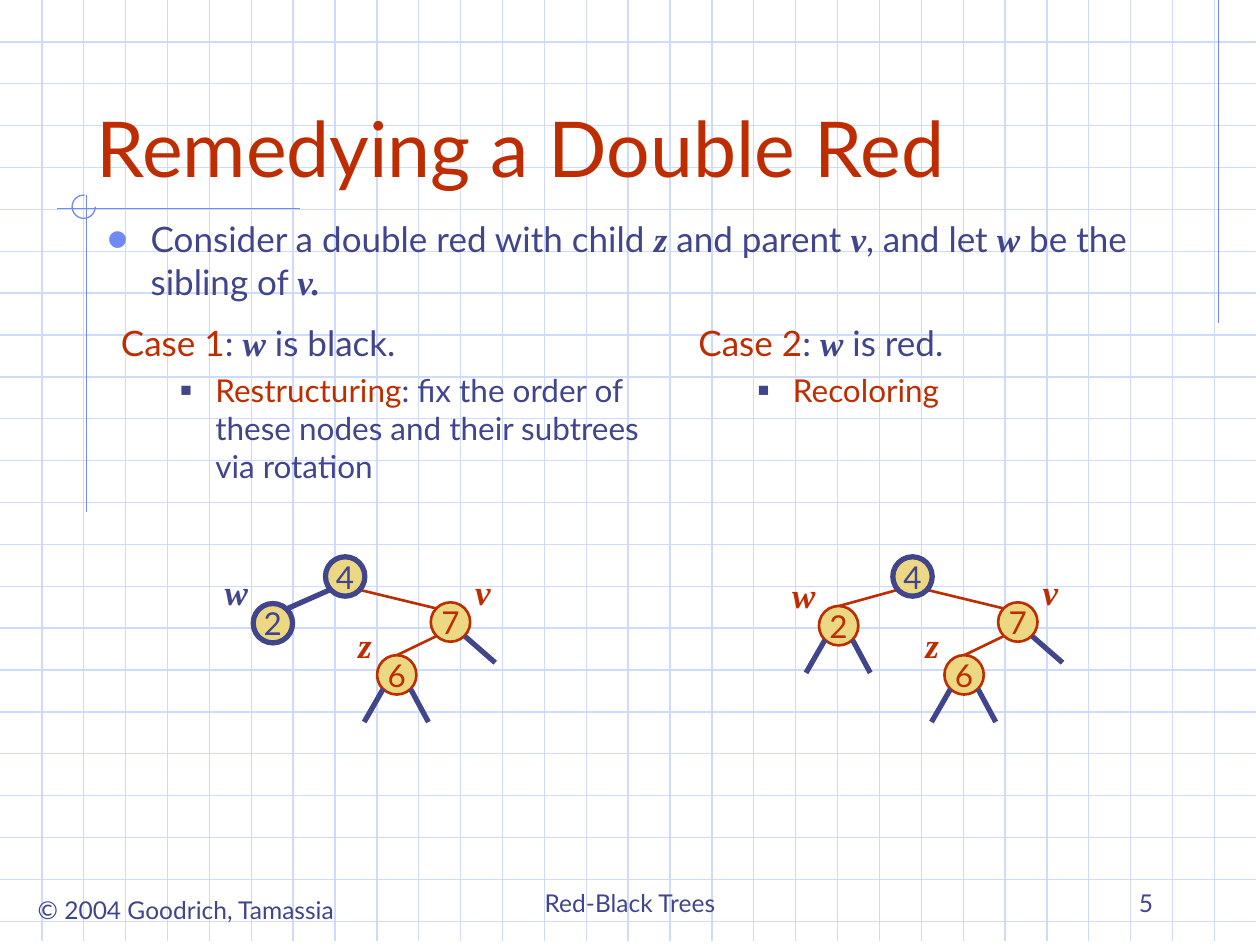
from dataclasses import dataclass
from typing import NamedTuple

import pptx
import pptx.dml.color
import pptx.enum.shapes
import pptx.enum.text
import pptx.oxml
import pptx.oxml.ns
import pptx.util

Pt = pptx.util.Pt
Shape = pptx.enum.shapes.MSO_SHAPE
Align = pptx.enum.text.PP_ALIGN
Anchor = pptx.enum.text.MSO_ANCHOR
qn = pptx.oxml.ns.qn


@dataclass(frozen=True)
class Theme:
    ink: str = "40458C"
    red: str = "BE2D00"
    gold: str = "ECD882"
    blue: str = "6F89F7"
    grid: str = "CFDBFD"
    sans: str = "Lato"
    serif: str = "Times New Roman"
    title: float = 44
    body: float = 20
    sub: float = 18
    foot: float = 14
    hair: float = 0.75
    thin: float = 1.5
    thick: float = 3


T = Theme()
SIZE = 22.5  # node diameter


class Run(NamedTuple):
    text: str
    color: str = T.ink
    math: bool = False


class Bullet(NamedTuple):
    char: str
    color: str
    scale: int


class Para(NamedTuple):
    runs: list[Run]
    size: float = T.body
    align: Align = Align.LEFT
    left: float = 0
    hang: float = 0
    before: float = 0
    level: int = 0
    mark: Bullet | None = None


class Line(NamedTuple):
    x1: float
    y1: float
    x2: float
    y2: float
    color: str = T.ink
    width: float = T.thick


class Node(NamedTuple):
    text: str
    x: float
    y: float
    color: str = T.red
    width: float = T.thin


class Label(NamedTuple):
    text: str
    x: float
    y: float
    width: float
    color: str = T.red


class Case(NamedTuple):
    dx: float
    nodes: list[Node]
    edges: list[Line]
    legs: list[Line]
    labels: list[Label]


def rgb(code: str) -> pptx.dml.color.RGBColor:
    return pptx.dml.color.RGBColor.from_string(code)


def add_line(slide, line: Line, dx: float = 0) -> None:
    item = slide.shapes.add_connector(
        pptx.enum.shapes.MSO_CONNECTOR.STRAIGHT,
        Pt(line.x1 + dx), Pt(line.y1), Pt(line.x2 + dx), Pt(line.y2))
    item.line.color.rgb = rgb(line.color)
    item.line.width = Pt(line.width)
    props = item._element.spPr
    props.append(props.makeelement(qn("a:effectLst"), {}))


def set_mark(props, mark: Bullet | None) -> None:
    if mark is None:
        props.append(props.makeelement(qn("a:buNone"), {}))
        return
    tint = props.makeelement(qn("a:buClr"), {})
    tint.append(tint.makeelement(qn("a:srgbClr"), {"val": mark.color}))
    props.append(tint)
    for tag, key, value in (("a:buSzPct", "val", str(mark.scale * 1000)),
                            ("a:buFont", "typeface", "Arial"),
                            ("a:buChar", "char", mark.char)):
        props.append(props.makeelement(qn(tag), {key: value}))


def fill_text(frame, paras: list[Para]) -> None:
    for i, para in enumerate(paras):
        item = frame.add_paragraph() if i else frame.paragraphs[0]
        item.level, item.alignment = para.level, para.align
        item.space_before = Pt(para.before)
        props = item._p.get_or_add_pPr()
        props.set("marL", str(Pt(para.left)))
        props.set("indent", str(Pt(para.hang)))
        set_mark(props, para.mark)
        for part in para.runs:
            run = item.add_run()
            run.text = part.text
            run.font.size = Pt(para.size)
            run.font.name = T.serif if part.math else T.sans
            run.font.bold = run.font.italic = part.math
            run.font.color.rgb = rgb(part.color)


def add_text(slide, x: float, y: float, w: float, h: float, paras: list[Para],
             anchor: Anchor = Anchor.TOP, wrap: bool = True) -> None:
    frame = slide.shapes.add_textbox(Pt(x), Pt(y), Pt(w), Pt(h)).text_frame
    frame.word_wrap, frame.vertical_anchor = wrap, anchor
    fill_text(frame, paras)


def add_node(slide, node: Node, dx: float) -> None:
    item = slide.shapes.add_shape(
        Shape.OVAL, Pt(node.x + dx), Pt(node.y), Pt(SIZE), Pt(SIZE))
    item.shadow.inherit = False
    item.fill.solid()
    item.fill.fore_color.rgb = rgb(T.gold)
    item.line.color.rgb = rgb(node.color)
    item.line.width = Pt(node.width)
    item.text_frame.word_wrap = False
    item.text_frame.vertical_anchor = Anchor.MIDDLE
    fill_text(item.text_frame,
              [Para([Run(node.text, node.color)], T.sub, Align.CENTER)])


def legs(node: Node) -> list[Line]:
    x, y = node.x, node.y
    return [Line(x + a, y + 19.4, x + b, y + 38.2)
            for a, b in ((19.2, 29.3), (3.4, -7.4))]


def add_case(slide, case: Case) -> None:
    for edge in case.edges:
        add_line(slide, edge, case.dx)
    for node in case.nodes:
        add_node(slide, node, case.dx)
    for leg in case.legs:
        add_line(slide, leg, case.dx)
    for tag in case.labels:
        add_text(slide, tag.x + case.dx, tag.y, tag.width, 31.5,
                 [Para([Run(tag.text, tag.color, True)], align=Align.CENTER)])


def add_back(slide) -> None:
    step = 23.93
    for i in range(1, 23):
        add_line(slide, Line(0, i * step, 718, i * step, T.grid, T.hair))
    for i in range(1, 30):
        add_line(slide, Line(i * step, 0, i * step, 538, T.grid, T.hair))
    for ends in ((696.5, 0, 696.5, 184.5), (171.5, 119.3, 32.3, 119.3),
                 (49.5, 111.5, 49.5, 292.5)):
        add_line(slide, Line(*ends, T.blue, T.hair))
    ring = slide.shapes.add_shape(Shape.ARC, Pt(41.2), Pt(111.5), Pt(13.3), Pt(13.3))
    ring.adjustments[0], ring.adjustments[1] = 0, 165  # 0 to 275 degrees
    ring.shadow.inherit = False
    ring.fill.background()
    ring.line.color.rgb = rgb(T.blue)
    ring.line.width = Pt(T.hair)


def main() -> None:
    deck = pptx.Presentation()
    deck.slide_width, deck.slide_height = Pt(720), Pt(540)
    slide = deck.slides.add_slide(deck.slide_layouts[6])
    add_back(slide)

    # Footer and title
    add_text(slide, 13, 508.2, 186.5, 24.5, [
        Para([Run("© 2004 Goodrich, Tamassia")], T.foot, Align.CENTER)], wrap=False)
    add_text(slide, 246, 492, 228, 36, [
        Para([Run("Red-Black Trees")], T.foot, Align.CENTER)], Anchor.BOTTOM)
    add_text(slide, 516, 492, 150, 36, [
        Para([Run("5")], T.foot, Align.RIGHT)], Anchor.BOTTOM)
    add_text(slide, 48, 24, 612, 90, [
        Para([Run("Remedying a Double Red", T.red)], T.title)], Anchor.BOTTOM)

    # Statement and the two cases
    add_text(slide, 54, 121, 606, 60, [Para([
        Run("Consider a double red with child "), Run("z ", math=True),
        Run("and parent "), Run("v", math=True), Run(", and let "),
        Run("w", math=True), Run(" be the sibling of "), Run("v.", math=True),
    ], left=25, hang=-25, mark=Bullet("•", T.blue, 176))])
    fix = Run(": fix the order of these nodes and their subtrees via rotation")
    for x, w, name, state, steps in (
            (60, 324, "Case 1", " is black.", [Run("Restructuring", T.red), fix]),
            (390, 306, "Case 2", " is red.", [Run("Recoloring", T.red)])):
        add_text(slide, x, 180, w, 132, [
            Para([Run(name, T.red), Run(": "), Run("w", math=True), Run(state)],
                 left=27, hang=-25),
            Para(steps, T.sub, left=56, hang=-20, before=4.5, level=1,
                 mark=Bullet("■", T.ink, 60))])

    # Trees
    root = Node("4", 186, 318.2, T.ink, T.thick)
    six, seven = Node("6", 215.5, 374.4), Node("7", 246.2, 344.2)
    dark, light = Node("2", 144.7, 344.9, T.ink, T.thick), Node("2", 143.8, 346.3)
    edges = [Line(205.2, 337, 249.8, 347.8, T.red, T.thin),
             Line(249.2, 363.6, 226.8, 374.4, T.red, T.thin)]
    stems = legs(six) + [Line(265.7, 363.6, 283, 378.7)]
    tags = [Label("z", 195.2, 352.8, 26.6), Label("v", 263.8, 322.6, 24.5)]
    add_case(slide, Case(
        0, [root, six, seven, dark], edges + [Line(188.6, 337, 164.2, 347.8)],
        stems, tags + [Label("w", 120, 322.6, 30.2, T.ink)]))
    add_case(slide, Case(
        324.2, [root, six, seven, light],
        edges + [Line(189, 337, 155.3, 346.3, T.red, T.thin)],
        stems + legs(light), tags + [Label("w", 120, 324, 30.2)]))

    deck.save("out.pptx")


if __name__ == "__main__":
    main()
